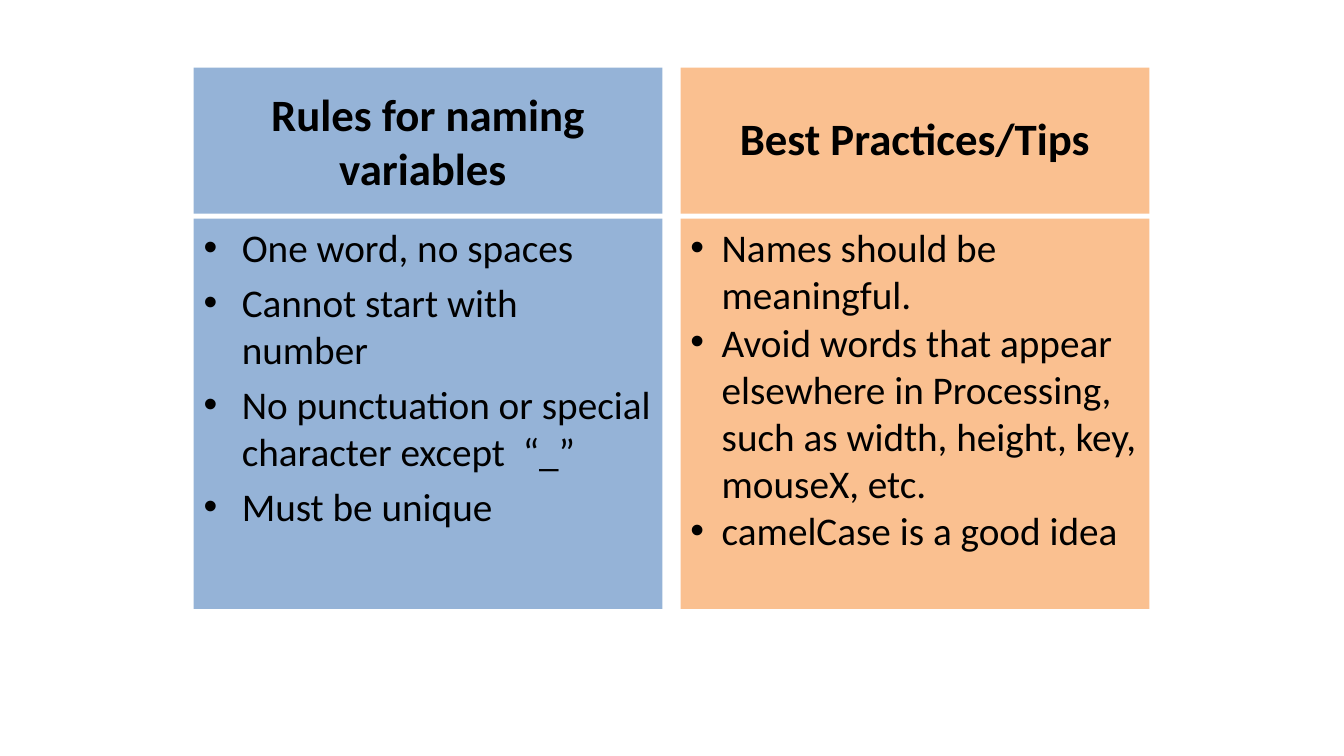
"""Build a slide comparing naming rules with best practices for variables."""
from pptx import Presentation
from pptx.dml.color import RGBColor
from pptx.enum import shapes, text
from pptx.oxml import ns
from pptx.util import Inches, Pt
from lxml import etree

BLUE = RGBColor(0x95, 0xB3, 0xD7)
ORANGE = RGBColor(0xFA, 0xC0, 0x90)
BLACK = RGBColor(0, 0, 0)

COLUMN_TOP, COLUMN_WIDTH, COLUMN_HEIGHT = 0.67, 4.65, 5.37
HEADING_HEIGHT, HEADING_GAP = 1.45, 0.05

COLUMNS = [
    {
        "left": 1.92, "color": BLUE, "heading": "Rules for naming variables ",
        "line_spacing": 1.0, "indent": 0.38, "space_before": 5.6,
        "items": [
            "One word, no spaces",
            "Cannot start with number",
            "No punctuation or special character except  “_”",
            "Must be unique",
        ],
    },
    {
        "left": 6.75, "color": ORANGE, "heading": "Best Practices/Tips",
        "line_spacing": 0.9, "indent": 0.31, "space_before": 0,
        "items": [
            "Names should be meaningful.",
            "Avoid words that appear elsewhere in Processing, such as width, "
            "height, key, mouseX, etc.",
            "camelCase is a good idea",
        ],
    },
]


def set_attributes(target, values):
    """Set every named attribute on the target."""
    for name, value in values.items():
        setattr(target, name, value)


def add_panel(slide, box, color, anchor):
    """Add a filled rectangle in the box and return its text frame."""
    shape = slide.shapes.add_shape(
        shapes.MSO_SHAPE.RECTANGLE, *(Inches(length) for length in box))
    shape.shadow.inherit = False
    shape.fill.solid()
    shape.fill.fore_color.rgb = color
    shape.line.fill.background()
    set_attributes(shape.text_frame, {"word_wrap": True, "vertical_anchor": anchor})
    return shape.text_frame


def write_paragraph(paragraph, wording, size, bold, paragraph_format):
    """Write one formatted run into the paragraph."""
    set_attributes(paragraph, paragraph_format)
    run = paragraph.add_run()
    run.text = wording
    set_attributes(run.font, {"name": "Calibri", "size": Pt(size), "bold": bold})
    run.font.color.rgb = BLACK


def add_bullet(paragraph, indent):
    """Give the paragraph a round bullet with a hanging indent."""
    properties = paragraph._p.get_or_add_pPr()
    properties.set("marL", str(Inches(indent)))
    properties.set("indent", str(-Inches(indent)))
    etree.SubElement(properties, ns.qn("a:buFont")).set("typeface", "Arial")
    etree.SubElement(properties, ns.qn("a:buChar")).set("char", "•")


def add_heading(slide, box, column):
    """Add the column heading in the box."""
    frame = add_panel(slide, box, column["color"], text.MSO_ANCHOR.MIDDLE)
    write_paragraph(frame.paragraphs[0], column["heading"], 32, True, {
        "alignment": text.PP_ALIGN.CENTER,
        "line_spacing": column["line_spacing"],
    })


def add_bullet_list(slide, box, column):
    """Add the column's bulleted items in the box."""
    frame = add_panel(slide, box, column["color"], text.MSO_ANCHOR.TOP)
    for index, item in enumerate(column["items"]):
        paragraph = frame.add_paragraph() if index else frame.paragraphs[0]
        write_paragraph(paragraph, item, 28, False, {
            "alignment": text.PP_ALIGN.LEFT,
            "space_before": Pt(column["space_before"] if index else 0),
        })
        add_bullet(paragraph, column["indent"])


def add_column(slide, box, column):
    """Stack a heading above a bullet list within the box."""
    left, top, width, height = box
    offset = HEADING_HEIGHT + HEADING_GAP
    add_heading(slide, (left, top, width, HEADING_HEIGHT), column)
    add_bullet_list(slide, (left, top + offset, width, height - offset), column)


def main():
    """Create and save the presentation."""
    presentation = Presentation()
    set_attributes(presentation, {
        "slide_width": Inches(13.33), "slide_height": Inches(7.5)})
    slide = presentation.slides.add_slide(presentation.slide_layouts[6])
    for column in COLUMNS:
        box = (column["left"], COLUMN_TOP, COLUMN_WIDTH, COLUMN_HEIGHT)
        add_column(slide, box, column)
    presentation.save("out.pptx")


if __name__ == "__main__":
    main()
